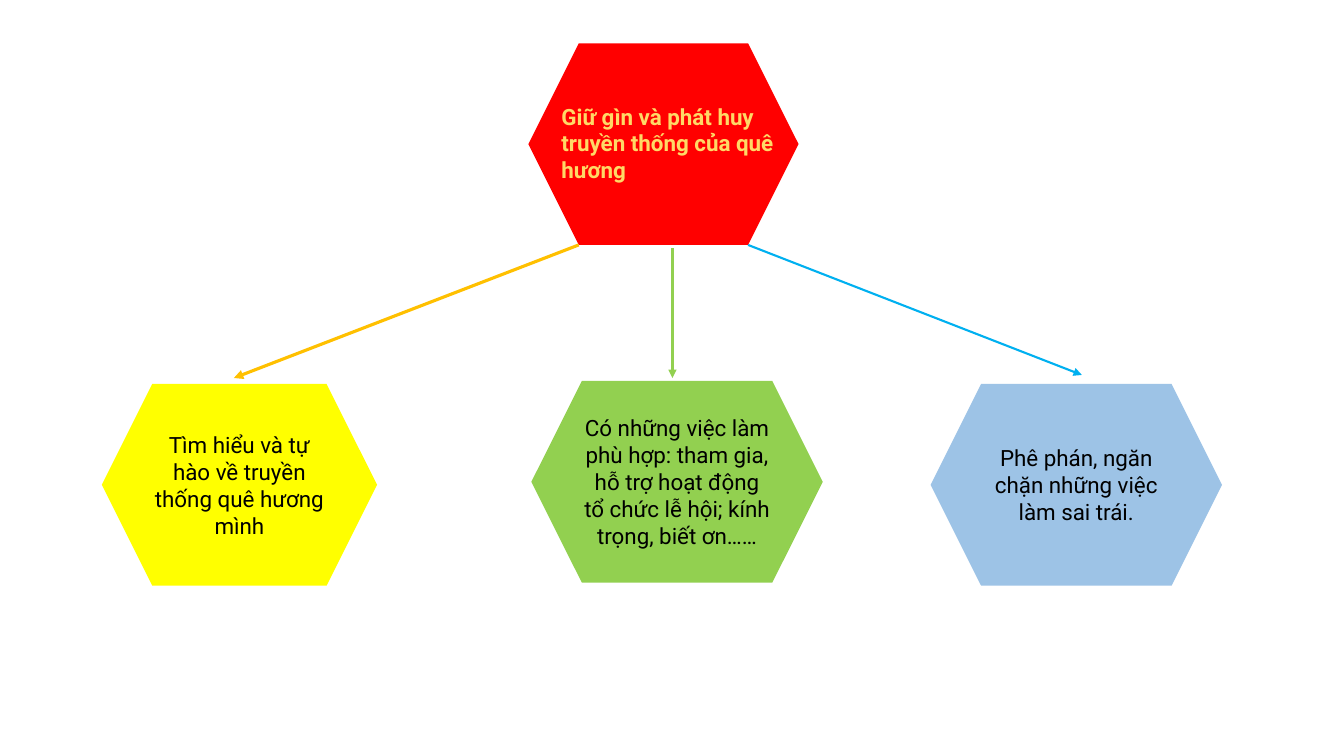
from lxml.etree import SubElement
from pptx import Presentation
from pptx.dml.color import RGBColor
from pptx.enum.shapes import MSO_CONNECTOR, MSO_SHAPE
from pptx.enum.text import MSO_ANCHOR, PP_ALIGN
from pptx.oxml.ns import qn
from pptx.util import Inches, Pt

TITLE = "Giữ gìn và phát huy truyền thống của quê hương"
# text, hexagon box, hexagon fill, arrow start, arrow end, arrow colour, arrow width
BRANCHES = [
    ("Tìm hiểu và tự hào về truyền thống quê hương mình",
     (1.01, 3.81, 2.73, 2), "FFFF00", (5.74, 2.43), (2.32, 3.75), "FFC000", 2.25),
    ("Có những việc làm phù hợp: tham gia, hỗ trợ hoạt động tổ chức lễ hội; "
     "kính trọng, biết ơn……",
     (5.27, 3.78, 2.89, 2), "92D050", (6.67, 2.46), (6.67, 3.75), "92D050", 1.5),
    ("Phê phán, ngăn chặn những việc làm sai trái.",
     (9.23, 3.81, 2.89, 2), "9DC3E6", (7.42, 2.43), (10.73, 3.72), "00B0F0", 1.5),
]


def rgb(value):
    return RGBColor.from_string(value)


def write(tf, text, color, align, bold=False):
    tf.word_wrap = True
    p = tf.paragraphs[0]
    p.text = text
    p.alignment = align
    p.font.name = "Roboto"
    p.font.size = Pt(16)
    p.font.bold = bold
    p.font.color.rgb = rgb(color)


def add_hexagon(s, box, fill):
    sp = s.shapes.add_shape(MSO_SHAPE.HEXAGON, *map(Inches, box))
    sp.shadow.inherit = False
    sp.fill.solid()
    sp.fill.fore_color.rgb = rgb(fill)
    sp.line.fill.background()
    return sp


def add_arrow(s, start, end, color, width):
    line = s.shapes.add_connector(MSO_CONNECTOR.STRAIGHT, *map(Inches, start + end))
    line.line.color.rgb = rgb(color)
    line.line.width = Pt(width)
    SubElement(line.line._get_or_add_ln(), qn("a:tailEnd"), type="triangle")
    SubElement(line._element.spPr, qn("a:effectLst"))


def add_topic(s, box):
    """Red hexagon with the title in a text box laid over it."""
    add_hexagon(s, box, "FF0000")
    left, top = box[:2]
    title = s.shapes.add_textbox(Inches(left + 0.23), Inches(top + 0.54),
                                 Inches(2.49), Inches(0.91))
    write(title.text_frame, TITLE, "FFD966", PP_ALIGN.LEFT, bold=True)


def add_branch(s, text, box, fill, start, end, color, width):
    sp = add_hexagon(s, box, fill)
    sp.text_frame.vertical_anchor = MSO_ANCHOR.MIDDLE
    write(sp.text_frame, text, "000000", PP_ALIGN.CENTER)
    add_arrow(s, start, end, color, width)


def main():
    prs = Presentation()
    prs.slide_width, prs.slide_height = Inches(13.33), Inches(7.5)
    s = prs.slides.add_slide(prs.slide_layouts[6])
    add_topic(s, (5.24, 0.43, 2.68, 2))
    for branch in BRANCHES:
        add_branch(s, *branch)
    prs.save("out.pptx")


if __name__ == "__main__":
    main()
